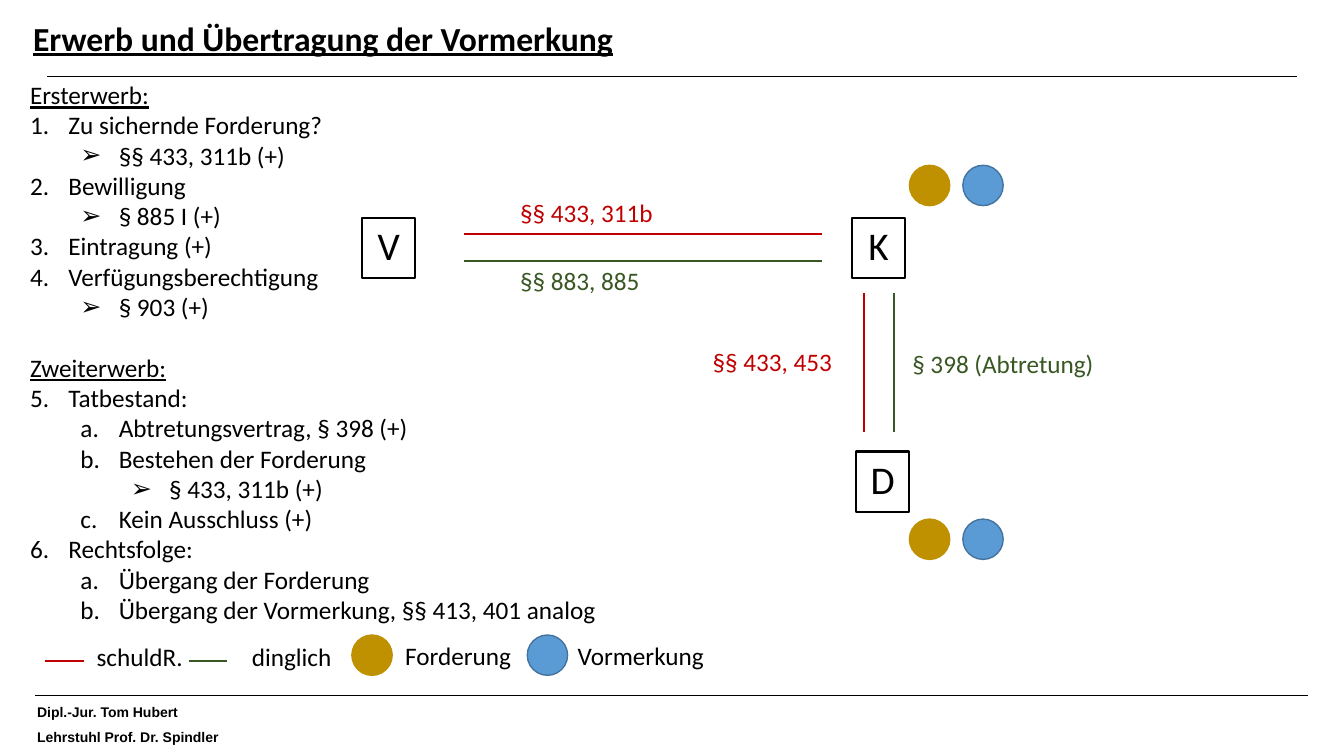
from pptx import Presentation
from pptx.dml.color import RGBColor
from pptx.enum.shapes import MSO_CONNECTOR as Link, MSO_SHAPE as Form
from pptx.enum.text import MSO_ANCHOR as Anchor, PP_ALIGN as Align
from pptx.oxml.ns import qn
from pptx.util import Inches, Pt
from lxml.etree import SubElement

RED, GREEN, BLACK = "C00000", "385723", "000000"
GOLD, BLUE, EDGE = "BF9000", "5B9BD5", "43739E"

deck = Presentation()
deck.slide_width, deck.slide_height = Inches(13.33), Inches(7.5)
slide = deck.slides.add_slide(deck.slide_layouts[6])
items = slide.shapes


def paint(part, color):
    if hasattr(part, "solid"):
        part.solid()
        part.fore_color.rgb = RGBColor.from_string(color)
    else:
        part.color.rgb = RGBColor.from_string(color)


def write(para, text, size=18, color=BLACK, font="Calibri", bold=False, under=False):
    run = para.add_run()
    run.text = text
    run.font.size, run.font.name = Pt(size), font
    run.font.bold, run.font.underline = bold, under
    paint(run.font, color)


for x1, y1, x2, y2, color, width in [
    (0.47, 0.76, 12.86, 0.76, BLACK, 1),
    (0.35, 6.9, 12.97, 6.9, BLACK, 1),
    (4.6, 2.32, 8.15, 2.32, RED, 1.5),
    (4.6, 2.59, 8.15, 2.59, GREEN, 1.5),
    (8.57, 2.91, 8.57, 4.29, RED, 1.5),
    (8.87, 2.91, 8.87, 4.29, GREEN, 1.5),
    (0.45, 6.56, 0.83, 6.56, RED, 1.5),
    (1.87, 6.56, 2.25, 6.56, GREEN, 1.5),
]:
    line = items.add_connector(Link.STRAIGHT, Inches(x1), Inches(y1), Inches(x2), Inches(y2))
    paint(line.line, color)
    line.line.width = Pt(width)
    SubElement(line._element.spPr, qn("a:effectLst"))

title = items.add_textbox(Inches(0.23), Inches(0.13), Inches(12.63), Inches(0.54)).text_frame
title.word_wrap = True
title.vertical_anchor = Anchor.MIDDLE
title.paragraphs[0].line_spacing = 0.9
write(title.paragraphs[0], "Erwerb und Übertragung der Vormerkung", size=24, bold=True, under=True)

for text, y, width in [
    ("Dipl.-Jur. Tom Hubert", 6.93, 1.63),
    ("Lehrstuhl Prof. Dr. Spindler", 7.18, 2.07),
]:
    foot = items.add_textbox(Inches(0.27), Inches(y), Inches(width), Inches(0.27)).text_frame
    foot.word_wrap = False
    write(foot.paragraphs[0], text, size=10, font="Arial", bold=True)

for name, x, y in [("V", 3.59, 2.16), ("K", 8.45, 2.16), ("D", 8.49, 4.48)]:
    box = items.add_shape(Form.RECTANGLE, Inches(x), Inches(y), Inches(0.53), Inches(0.6))
    box.shadow.inherit = False
    box.fill.background()
    paint(box.line, BLACK)
    box.line.width = Pt(1.5)
    box.text_frame.vertical_anchor = Anchor.MIDDLE
    para = box.text_frame.paragraphs[0]
    para.alignment = Align.CENTER
    para.line_spacing = 0.9
    write(para, name, size=28)

for y, gold, blue in [(1.64, 9.02, 9.55), (5.15, 9.02, 9.55), (6.3, 3.49, 5.23)]:
    for x, color, edge in [(gold, GOLD, GOLD), (blue, BLUE, EDGE)]:
        dot = items.add_shape(Form.OVAL, Inches(x), Inches(y), Inches(0.4), Inches(0.4))
        dot.shadow.inherit = False
        paint(dot.fill, color)
        paint(dot.line, edge)
        dot.line.width = Pt(1)

for text, x, y, width, color in [
    ("§§ 433, 311b", 5.06, 1.91, 2.83, RED),
    ("§§ 883, 885", 5.06, 2.58, 2.28, GREEN),
    ("§§ 433, 453", 6.97, 3.39, 2.83, RED),
    ("§ 398 (Abtretung)", 8.95, 3.41, 4.1, GREEN),
    ("schuldR.", 0.86, 6.31, 2.28, BLACK),
    ("dinglich", 2.4, 6.31, 2.28, BLACK),
    ("Forderung", 3.92, 6.3, 2.28, BLACK),
    ("Vormerkung", 5.63, 6.3, 2.28, BLACK),
]:
    label = items.add_textbox(Inches(x), Inches(y), Inches(width), Inches(0.4)).text_frame
    label.word_wrap = True
    write(label.paragraphs[0], text, color=color)

notes = items.add_textbox(Inches(0.2), Inches(0.74), Inches(5.87), Inches(5.86)).text_frame
notes.word_wrap = False
start = 1
for row, (level, mark, text) in enumerate([
    (0, "", "Ersterwerb:"),
    (0, "1", "Zu sichernde Forderung?"),
    (1, "➢", "§§ 433, 311b (+)"),
    (0, "1", "Bewilligung"),
    (1, "➢", "§ 885 I (+)"),
    (0, "1", "Eintragung (+)"),
    (0, "1", "Verfügungsberechtigung"),
    (1, "➢", "§ 903 (+)"),
    (0, "", "Zweiterwerb:"),
    (0, "1", "Tatbestand:"),
    (1, "a", "Abtretungsvertrag, § 398 (+)"),
    (1, "a", "Bestehen der Forderung"),
    (2, "➢", "§ 433, 311b (+)"),
    (1, "a", "Kein Ausschluss (+)"),
    (0, "1", "Rechtsfolge:"),
    (1, "a", "Übergang der Forderung"),
    (1, "a", "Übergang der Vormerkung, §§ 413, 401 analog"),
]):
    para = notes.paragraphs[0] if row == 0 else notes.add_paragraph()
    para.level = level
    write(para, text, under=not mark)
    if not mark:
        if row:
            para.space_before = Pt(22)
            start = 5
        continue
    props = para._p.get_or_add_pPr()
    props.set("marL", str(Inches(0.38 + 0.5 * level)))
    props.set("indent", str(Inches(-0.38)))
    if mark == "➢":
        SubElement(props, qn("a:buFont"), typeface="Arial")
        SubElement(props, qn("a:buChar"), char=mark)
    elif mark == "a":
        SubElement(props, qn("a:buAutoNum"), type="alphaLcPeriod")
    else:
        SubElement(props, qn("a:buAutoNum"), type="arabicPeriod", startAt=str(start))

deck.save("out.pptx")
